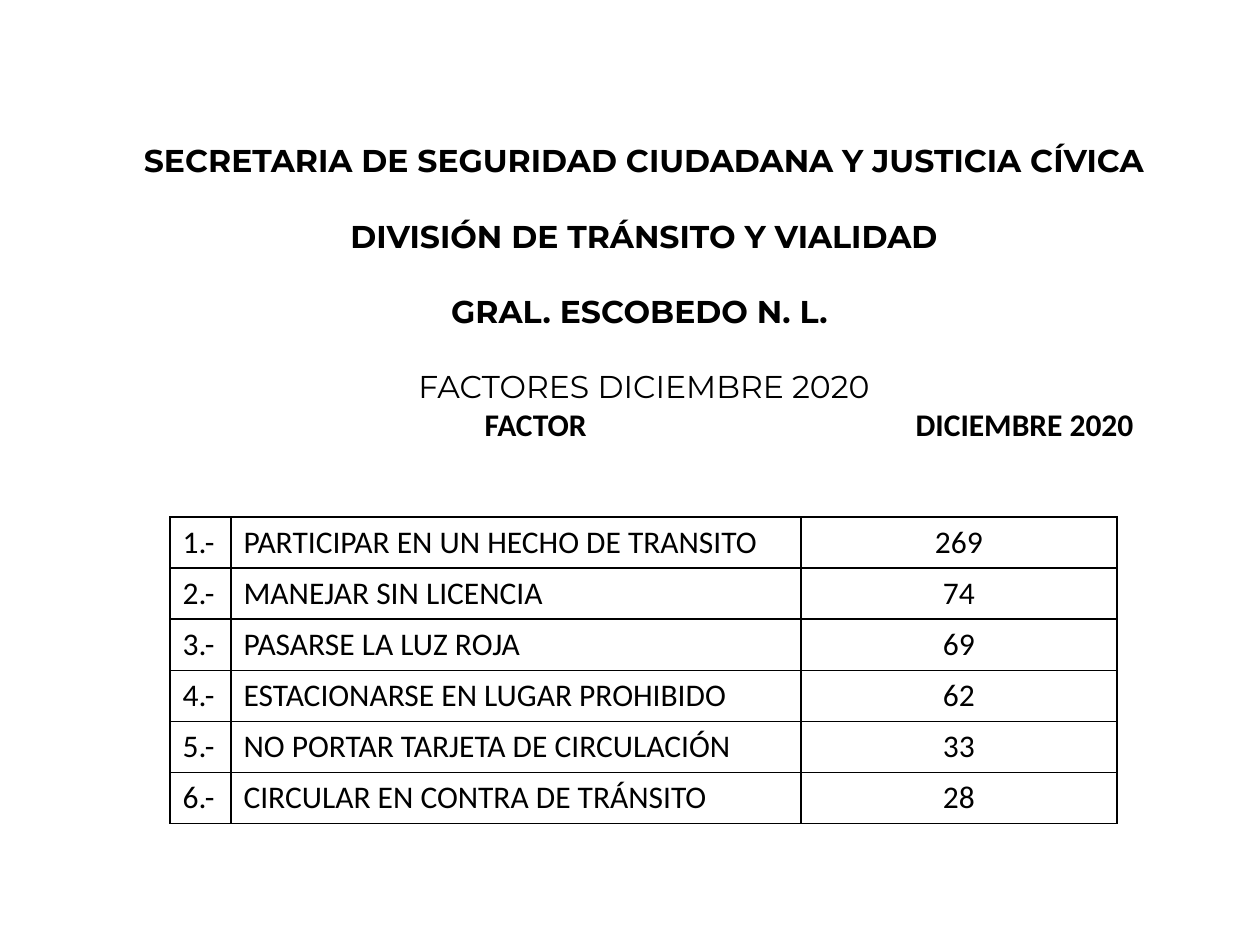
from lxml import etree
from pptx import Presentation
from pptx import util as u
from pptx.dml.color import RGBColor
from pptx.enum import text
from pptx.oxml import ns

HEADING = [
    "SECRETARIA DE SEGURIDAD CIUDADANA Y JUSTICIA CÍVICA",
    "DIVISIÓN DE TRÁNSITO Y VIALIDAD",
    "GRAL. ESCOBEDO N. L. ",
    "FACTORES DICIEMBRE 2020",
]
COLUMN_TITLES = ["FACTOR", "DICIEMBRE 2020"]
FACTORS = [
    ("PARTICIPAR EN UN HECHO DE TRANSITO", 269),
    ("MANEJAR SIN LICENCIA", 74),
    ("PASARSE LA LUZ ROJA", 69),
    ("ESTACIONARSE EN LUGAR PROHIBIDO", 62),
    ("NO PORTAR TARJETA DE CIRCULACIÓN", 33),
    ("CIRCULAR EN CONTRA DE TRÁNSITO", 28),
]
COLORS = {"ink": "000000"}
HEADING_BOX = (111, 135, 1066, 357)
COLUMN_TITLE_TABS = (361, 792)
TABLE_LEFT, TABLE_TOP = 170, 517
COLUMN_WIDTHS = (61, 570, 316)
ROW_HEIGHT = 50


def px(length):
    return u.Emu(round(length * 914400 / 126))


def format_runs(para, font, bold=False):
    for span in para.runs:
        span.font.name = font
        span.font.size = u.Pt(18)
        span.font.bold = bold
        span.font.color.rgb = RGBColor.from_string(COLORS["ink"])


def add_tabs(para, stops):
    tabs = etree.SubElement(para._p.get_or_add_pPr(), ns.qn("a:tabLst"))
    for stop in stops:
        etree.SubElement(tabs, ns.qn("a:tab"), pos=str(px(stop)), algn="l")


def add_borders(cell):
    properties = cell._tc.get_or_add_tcPr()
    for side in ("lnL", "lnR", "lnT", "lnB"):
        line = etree.SubElement(properties, ns.qn(f"a:{side}"), w=str(u.Pt(1)))
        fill = etree.SubElement(line, ns.qn("a:solidFill"))
        etree.SubElement(fill, ns.qn("a:srgbClr"), val=COLORS["ink"])


def fill_heading(box):
    box.left, box.top, box.width, box.height = map(px, HEADING_BOX)
    frame = box.text_frame
    frame.word_wrap = True
    frame.auto_size = text.MSO_AUTO_SIZE.NONE
    frame.vertical_anchor = text.MSO_ANCHOR.TOP
    frame.text = "\n".join(HEADING)
    for index, para in enumerate(frame.paragraphs):
        para.alignment = text.PP_ALIGN.CENTER
        para.space_before = u.Pt(21.5 if index else 0)
        format_runs(para, "Montserrat", bold=index < len(HEADING) - 1)

    para = frame.add_paragraph()
    para.alignment = text.PP_ALIGN.LEFT
    add_tabs(para, COLUMN_TITLE_TABS)
    para.text = "".join("\t" + title for title in COLUMN_TITLES)
    format_runs(para, "Calibri", bold=True)


def add_factor_table(page):
    table = page.shapes.add_table(
        len(FACTORS), len(COLUMN_WIDTHS), px(TABLE_LEFT), px(TABLE_TOP),
        px(sum(COLUMN_WIDTHS)), px(ROW_HEIGHT * len(FACTORS))).table
    table.first_row = table.horz_banding = False
    for column, width in zip(table.columns, COLUMN_WIDTHS):
        column.width = px(width)
    for row, (factor, count) in enumerate(FACTORS):
        for column, value in enumerate((f"{row + 1}.-", factor, str(count))):
            cell = table.cell(row, column)
            add_borders(cell)
            cell.fill.background()
            cell.text = value
            para = cell.text_frame.paragraphs[0]
            if column == 2:
                para.alignment = text.PP_ALIGN.CENTER
            format_runs(para, "Calibri")


def main():
    deck = Presentation()
    deck.slide_width, deck.slide_height = u.Inches(10), u.Inches(7.5)
    page = deck.slides.add_slide(deck.slide_layouts[5])
    fill_heading(page.shapes.title)
    add_factor_table(page)
    deck.save("out.pptx")


if __name__ == "__main__":
    main()
